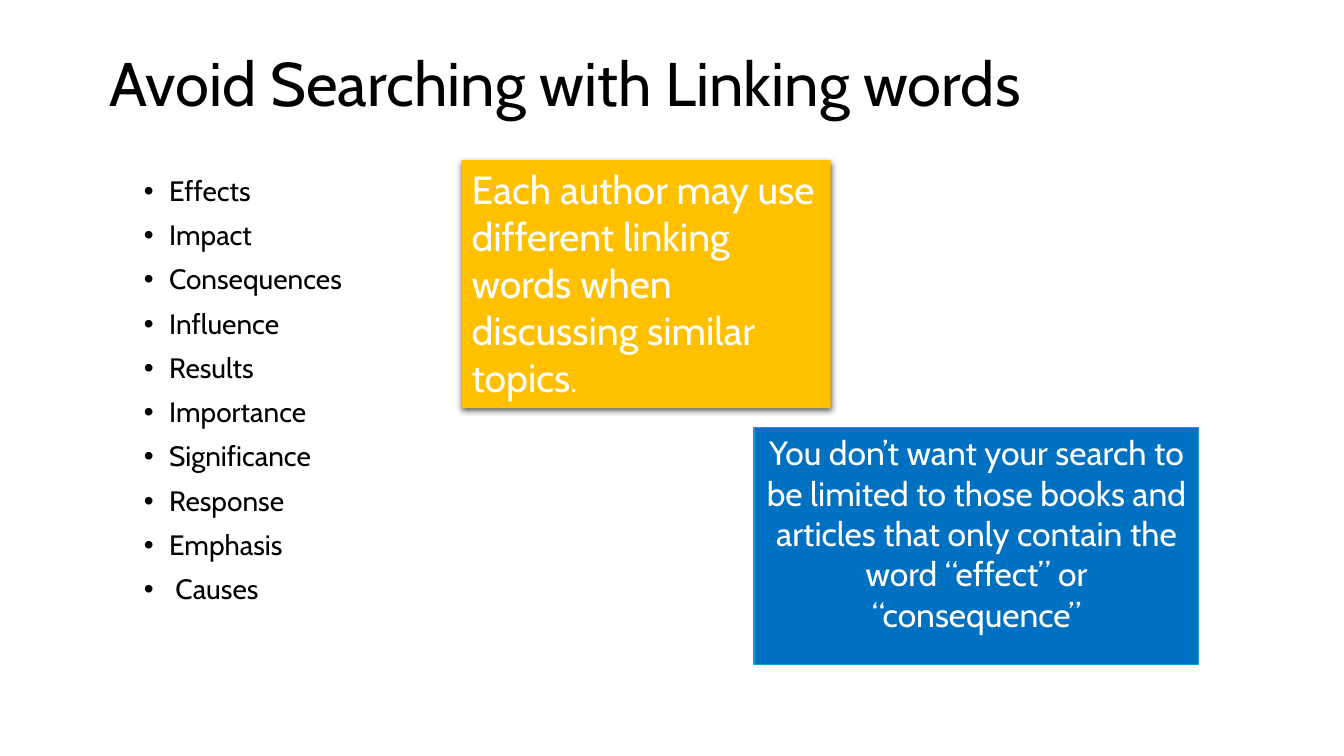
from dataclasses import dataclass
from typing import Optional

from lxml import etree
from pptx import Presentation
from pptx.dml.color import RGBColor
from pptx.enum import shapes, text
from pptx.oxml import ns
from pptx.util import Inches, Pt

FONT = "Cabin"
COLOURS = {
    "ink": "000000",
    "white": "FFFFFF",
    "amber": "FFC000",
    "blue": "0070C0",
    "blue_edge": "0F9ED5",
}
LINKING_WORDS = [
    "Effects", "Impact", "Consequences", "Influence", "Results",
    "Importance", "Significance", "Response", "Emphasis", " Causes",
]


@dataclass
class Span:
    words: str
    size: float


@dataclass
class Callout:
    left: float
    top: float
    width: float
    height: float
    fill: str
    align: text.PP_ALIGN
    spans: list[Span]
    edge: Optional[str] = None
    shadow: bool = False


CALLOUTS = [
    Callout(4.58, 1.59, 3.66, 2.46, "amber", text.PP_ALIGN.LEFT,
            [Span("Each author may use different linking words when "
                  "discussing similar topics", 28), Span(".", 24)],
            shadow=True),
    Callout(7.48, 4.24, 4.41, 2.35, "blue", text.PP_ALIGN.CENTER,
            [Span("You don’t want your search to be limited to those books "
                  "and articles that only contain the word “effect” or "
                  "“consequence”", 24)],
            edge="blue_edge"),
]


def colour(name: str) -> RGBColor:
    return RGBColor.from_string(COLOURS[name])


def style_font(font, size: float, ink: str) -> None:
    font.name = FONT
    font.size = Pt(size)
    font.color.rgb = colour(ink)


def add_text_frame(page, left: float, top: float, width: float, height: float):
    box = page.shapes.add_textbox(Inches(left), Inches(top), Inches(width), Inches(height))
    box.text_frame.word_wrap = True
    return box.text_frame


def add_bullet(para) -> None:
    properties = para._p.get_or_add_pPr()
    properties.set("marL", str(Inches(0.25)))
    properties.set("indent", str(Inches(-0.25)))
    font = etree.SubElement(properties, ns.qn("a:buFont"))
    font.set("typeface", "Arial")
    etree.SubElement(properties, ns.qn("a:buChar")).set("char", "•")


def add_soft_shadow(box) -> None:
    effects = box._element.spPr.find(ns.qn("a:effectLst"))
    shadow = etree.SubElement(effects, ns.qn("a:outerShdw"), blurRad=str(Pt(4.5)),
                              dist=str(Pt(1.5)), dir="5400000", rotWithShape="0")
    tint = etree.SubElement(shadow, ns.qn("a:srgbClr"), val=COLOURS["ink"])
    etree.SubElement(tint, ns.qn("a:alpha"), val="63000")


def add_callout(page, callout: Callout) -> None:
    box = page.shapes.add_shape(
        shapes.MSO_SHAPE.RECTANGLE, Inches(callout.left), Inches(callout.top),
        Inches(callout.width), Inches(callout.height))
    box.shadow.inherit = False
    box.fill.solid()
    box.fill.fore_color.rgb = colour(callout.fill)
    if callout.edge:
        box.line.color.rgb = colour(callout.edge)
        box.line.width = Pt(1)
    else:
        box.line.fill.background()
    if callout.shadow:
        add_soft_shadow(box)

    frame = box.text_frame
    frame.word_wrap = True
    frame.vertical_anchor = text.MSO_ANCHOR.TOP
    para = frame.paragraphs[0]
    para.alignment = callout.align
    style_font(para.font, callout.spans[0].size, "white")
    for part in callout.spans:
        span = para.add_run()
        span.text = part.words
        style_font(span.font, part.size, "white")


def main() -> None:
    deck = Presentation()
    deck.slide_width, deck.slide_height = Inches(13.33), Inches(7.5)
    page = deck.slides.add_slide(deck.slide_layouts[6])

    # Title
    frame = add_text_frame(page, 0.99, 0.32, 11.13, 1.08)
    frame.vertical_anchor = text.MSO_ANCHOR.MIDDLE
    title = frame.paragraphs[0]
    title.text = "Avoid Searching with Linking words"
    title.line_spacing = 0.9
    style_font(title.font, 44, "ink")

    # Bulleted linking words
    frame = add_text_frame(page, 1.33, 1.71, 7.1, 5.37)
    for index, word in enumerate(LINKING_WORDS):
        para = frame.add_paragraph() if index else frame.paragraphs[0]
        para.text = word
        para.line_spacing = 0.9
        para.space_before = Pt(10)
        style_font(para.font, 20, "ink")
        add_bullet(para)

    # Callouts
    for callout in CALLOUTS:
        add_callout(page, callout)

    deck.save("out.pptx")


if __name__ == "__main__":
    main()
